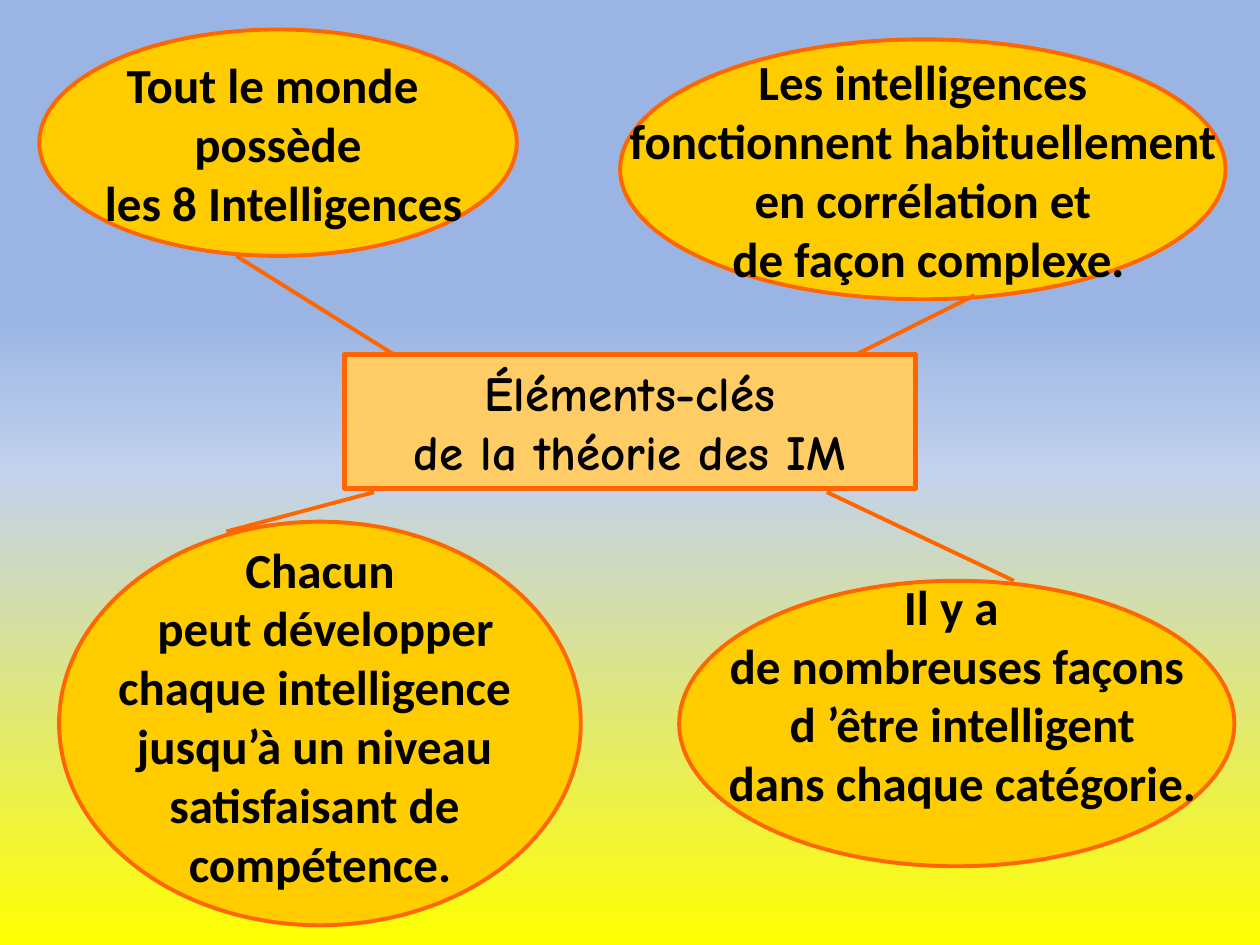
from dataclasses import dataclass

from lxml import etree
from pptx import Presentation, util as u
from pptx.dml.color import RGBColor
from pptx.enum import shapes, text
from pptx.oxml.ns import qn


@dataclass(frozen=True)
class Theme:
    body_font: str = "Calibri"
    title_font: str = "Comic Neue"
    size: int = 28
    ink: str = "000000"
    outline: str = "FF6600"
    bubble: str = "FFCC00"
    title: str = "FFCC66"
    thin: float = 2.25
    thick: float = 3
    sky: tuple = ((33, "9AB5E4"), (50, "C2D1ED"), (100, "FFFF00"))


THEME = Theme()
WIDTH, HEIGHT = u.Inches(10), u.Inches(7.5)
COLUMNS, ROWS = 64, 48

TITLE = ["Éléments-clés", "de la théorie des IM"]
TITLE_AREA = (17.5, 18, 29, 6.8)

BUBBLES = [
    {"area": (2, 1.5, 24.25, 11.5), "lift": 0,
     "lines": ["Tout le monde ", "possède", " les 8 Intelligences"]},
    {"area": (3, 26.5, 26.5, 20.5), "lift": 0.8,
     "lines": ["Chacun", " peut développer", "chaque intelligence ",
               "jusqu’à un niveau ", "satisfaisant de ", "compétence."]},
    {"area": (31.5, 2, 30.75, 13.2), "lift": 0,
     "lines": ["Les intelligences", " fonctionnent habituellement ",
               "en corrélation et", " de façon complexe."]},
    {"area": (34.5, 29.5, 28.2, 14.5), "lift": 3,
     "lines": ["Il y a ", "de nombreuses façons", " d ’être intelligent",
               " dans chaque catégorie."]},
]

LINKS = [
    ((20, 18), (12, 13)),
    ((51.5, 29.5), (42, 25)),
    ((11.5, 27), (19, 25)),
    ((49.5, 15), (43.5, 18)),
]


def across(columns):
    return round(WIDTH * columns / COLUMNS)


def down(rows):
    return round(HEIGHT * rows / ROWS)


def color(value):
    return RGBColor.from_string(value)


def paint_sky(page):
    page.background.fill.gradient()
    stops = page.element.find(".//" + qn("a:gsLst"))
    for stop in list(stops):
        stops.remove(stop)
    for position, value in THEME.sky:
        stop = etree.SubElement(stops, qn("a:gs"), pos=str(position * 1000))
        etree.SubElement(stop, qn("a:srgbClr"), val=value)
    direction = page.element.find(".//" + qn("a:lin"))
    direction.set("ang", "5400000")
    direction.set("scaled", "0")


def add_span(para, words, font):
    span = para.add_run()
    span.text = words
    span.font.name = font
    span.font.size = u.Pt(THEME.size)
    span.font.bold = True
    span.font.color.rgb = color(THEME.ink)


def add_box(page, kind, area, fill, weight):
    left, top, width, height = area
    box = page.shapes.add_shape(kind, across(left), down(top), across(width), down(height))
    box.shadow.inherit = False
    box.fill.solid()
    box.fill.fore_color.rgb = color(fill)
    box.line.color.rgb = color(THEME.outline)
    box.line.width = u.Pt(weight)
    box.text_frame.vertical_anchor = text.MSO_ANCHOR.MIDDLE
    return box


def add_title(page):
    box = add_box(page, shapes.MSO_SHAPE.RECTANGLE, TITLE_AREA, THEME.title, THEME.thick)
    box.text_frame.word_wrap = True
    para = box.text_frame.paragraphs[0]
    para.alignment = text.PP_ALIGN.CENTER
    for index, line in enumerate(TITLE):
        if index:
            para.add_line_break()
        add_span(para, line, THEME.title_font)


def add_bubble(page, bubble):
    box = add_box(page, shapes.MSO_SHAPE.OVAL, bubble["area"], THEME.bubble, THEME.thin)
    frame = box.text_frame
    frame.word_wrap = False
    frame.margin_bottom += down(bubble["lift"])
    for index, line in enumerate(bubble["lines"]):
        para = frame.add_paragraph() if index else frame.paragraphs[0]
        para.alignment = text.PP_ALIGN.CENTER
        add_span(para, line, THEME.body_font)


def add_link(page, start, end):
    link = page.shapes.add_connector(
        shapes.MSO_CONNECTOR.STRAIGHT,
        across(start[0]), down(start[1]), across(end[0]), down(end[1]))
    link.line.color.rgb = color(THEME.outline)
    link.line.width = u.Pt(THEME.thin)
    etree.SubElement(link.element.spPr, qn("a:effectLst"))


def main():
    deck = Presentation()
    deck.slide_width, deck.slide_height = WIDTH, HEIGHT
    page = deck.slides.add_slide(deck.slide_layouts[6])
    paint_sky(page)
    add_title(page)
    for bubble in BUBBLES:
        add_bubble(page, bubble)
    for start, end in LINKS:
        add_link(page, start, end)
    deck.save("out.pptx")


if __name__ == "__main__":
    main()
